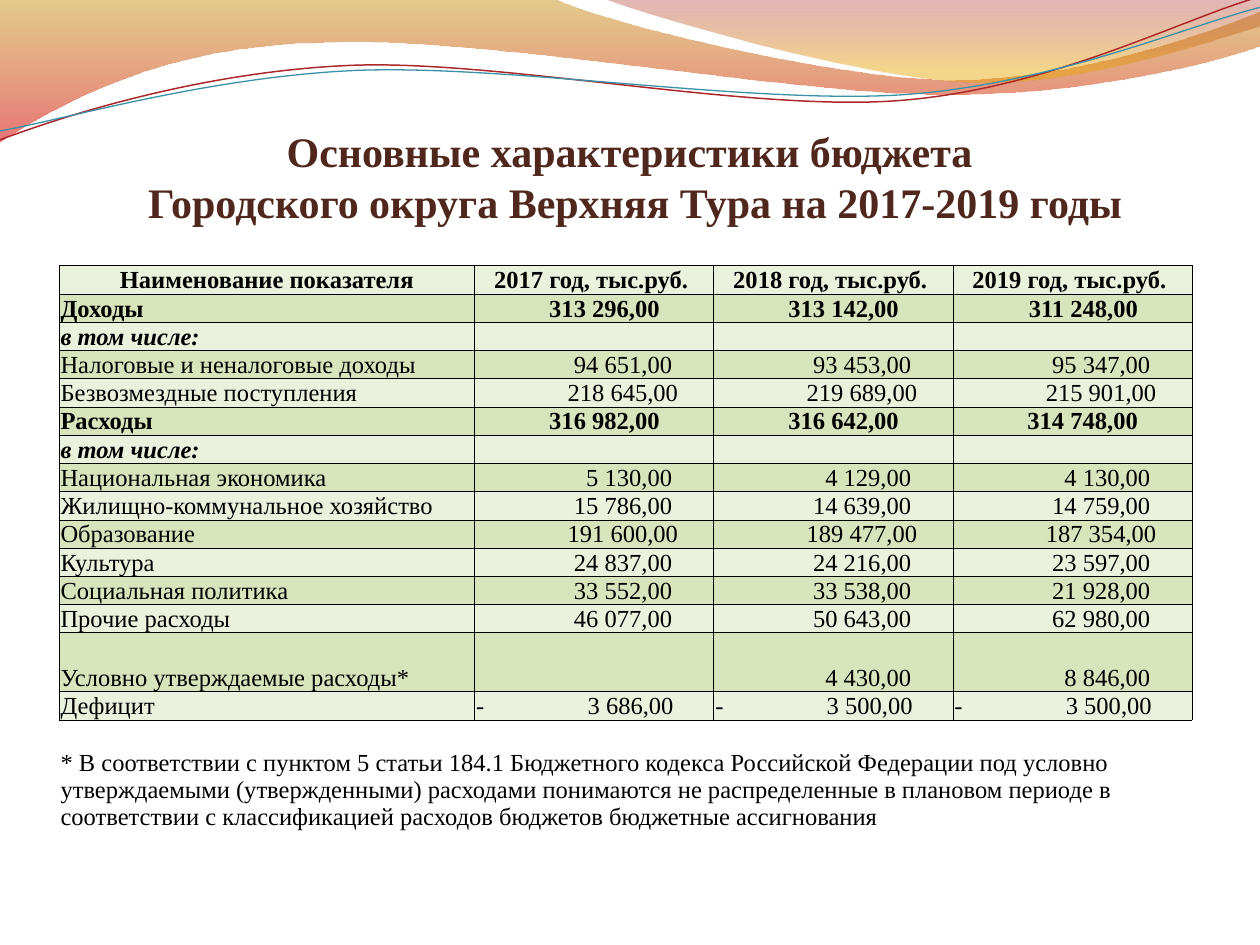
from lxml.etree import SubElement
from pptx import Presentation
from pptx.dml.color import RGBColor as RGB
from pptx.enum.text import MSO_ANCHOR as ANCHOR, MSO_AUTO_SIZE as AUTO, PP_ALIGN as ALIGN
from pptx.oxml.ns import qn
from pptx.util import Cm, Pt

THEME = {
    "font": "Times New Roman",
    "title_size": Pt(24), "table_size": Pt(14),
    "title": RGB.from_string("4F271C"), "text": RGB.from_string("000000"),
    "bands": (RGB.from_string("EAF1DD"), RGB.from_string("D7E4BC")),
    "border": "000000", "border_width": Pt(0.5),
    "no_grid_style": "{2D5ABB26-0587-4C30-8999-92F81FD0307C}",
}

TITLE = ("Основные характеристики бюджета \v"
         "Городского округа Верхняя Тура на 2017-2019 годы")
HEADER = ("Наименование показателя",
          "2017 год, тыс.руб. ", "2018 год, тыс.руб. ", "2019 год, тыс.руб. ")
# (kind, name, 2017, 2018, 2019)
ROWS = [
    ("total", "Доходы", "313 296,00", "313 142,00", "311 248,00"),
    ("including", "в том числе:", "", "", ""),
    ("item", "Налоговые и неналоговые доходы", "94 651,00", "93 453,00", "95 347,00"),
    ("item", "Безвозмездные поступления", "218 645,00", "219 689,00", "215 901,00"),
    ("total", "Расходы", "316 982,00", "316 642,00", "314 748,00"),
    ("including", "в том числе:", "", "", ""),
    ("item", "Национальная экономика", "5 130,00", "4 129,00", "4 130,00"),
    ("item", "Жилищно-коммунальное хозяйство", "15 786,00", "14 639,00", "14 759,00"),
    ("item", "Образование", "191 600,00", "189 477,00", "187 354,00"),
    ("item", "Культура", "24 837,00", "24 216,00", "23 597,00"),
    ("item", "Социальная политика", "33 552,00", "33 538,00", "21 928,00"),
    ("item", "Прочие расходы", "46 077,00", "50 643,00", "62 980,00"),
    ("tall", "Условно утверждаемые расходы*", "", "4 430,00", "8 846,00"),
    ("deficit", "Дефицит", "-\t3 686,00", "-\t3 500,00", "-\t3 500,00"),
]
NOTE = ("* В соответствии с пунктом 5 статьи 184.1 Бюджетного кодекса Российской "
        "Федерации под условно утверждаемыми (утвержденными) расходами понимаются "
        "не распределенные в плановом периоде в соответствии с классификацией "
        "расходов бюджетов бюджетные ассигнования")

KIND_FONT = {"header": {"bold": True}, "total": {"bold": True},
             "including": {"bold": True, "italic": True}}
COL_WIDTHS = (8.38, 4.82, 4.82, 4.82)
ROW_H, TALL_H, NOTE_H = 0.57, 1.19, 2.18
PAD, TOP_PAD = 0.03, 0.02
NUMBER_PAD, LONG_NUMBER_PAD, TOTAL_PAD = 0.84, 0.72, 1.09

# Outlines in cm: a pair is a straight step, six numbers are a Bézier step.
# Gradient stops: (position, colour, opacity in percent)
WAVES = [
    {"outline": [(0, -0.03), (11.18, -0.03),
                 (12.09, 0.43, 16.87, 1.6, 19.25, 1.6),
                 (21.67, 1.6, 24.33, 0.66, 25.4, 0.23), (25.43, 0.91),
                 (24.97, 1.12, 22.1, 1.93, 18.95, 1.9),
                 (15.8, 1.9, 9.7, 0.71, 6.53, 0.86),
                 (3.28, 0.89, 1.17, 2.11, -0.03, 2.87), (0, -0.03)],
     "stops": [(0, "C38B00", 45), (1, "D60305", 55)]},
    {"outline": [(12.17, -0.03),
                 (12.93, 0.28, 17.32, 1.57, 19.53, 1.65),
                 (21.74, 1.75, 24.41, 0.81, 25.4, 0.53), (25.4, 0), (12.17, -0.03)],
     "stops": [(0, "A11112", 30), (0.8, "E9A600", 45)]},
    {"outline": [(0, 2.82),
                 (1.22, 2.36, 4.01, 1.45, 7.04, 1.32),
                 (10.03, 1.19, 15.06, 2.26, 18.11, 2.03),
                 (21.16, 1.8, 23.83, 0.38, 25.35, -0.05)],
     "line": ("AC2829", 0.85)},
    {"outline": [(0, 2.64),
                 (1.19, 2.44, 4.17, 1.55, 7.19, 1.42),
                 (10.24, 1.3, 15.16, 2.11, 18.21, 1.91),
                 (21.23, 1.7, 23.9, 0.53, 25.4, 0.15)],
     "line": ("3891A7", 0.75)},
]


def set_attrs(obj, **values):
    for name, value in values.items():
        setattr(obj, name, value)


def add_outline(slide, outline, close):
    """Build a freeform, then join each Bézier step's three points into a curve."""
    points = [(Cm(x), Cm(y)) for step in outline for x, y in zip(step[::2], step[1::2])]
    builder = slide.shapes.build_freeform(*points[0])
    builder.add_line_segments(points[1:], close=close)
    s = builder.convert_to_shape()
    segments = iter(list(s._element.iter(qn("a:lnTo"))))
    for step in outline[1:]:
        first = next(segments)
        if len(step) == 6:
            first.tag = qn("a:cubicBezTo")
            for _ in range(2):
                control = next(segments)
                first.append(control[0])
                control.getparent().remove(control)
    return s


def add_wave(slide, outline, stops=None, line=None):
    s = add_outline(slide, outline, close=bool(stops))
    s.shadow.inherit = False
    if line:
        color, width = line
        s.fill.background()
        s.line.color.rgb = RGB.from_string(color)
        s.line.width = Pt(width)
        return
    s.line.fill.background()
    s.fill.gradient()
    s.fill.gradient_angle = 270
    for stop, (position, color, opacity) in zip(s.fill.gradient_stops, stops):
        stop.position = position
        stop.color.rgb = RGB.from_string(color)
        for clr in stop._gs.iter(qn("a:srgbClr")):
            SubElement(clr, qn("a:alpha"), val=str(opacity * 1000))


def set_borders(cell, shown):
    tc_pr = cell._tc.get_or_add_tcPr()
    for side in "LRTB":
        ln = SubElement(tc_pr, qn(f"a:ln{side}"), w=str(THEME["border_width"]))
        if side in shown:
            fill = SubElement(ln, qn("a:solidFill"))
            SubElement(fill, qn("a:srgbClr"), val=THEME["border"])
        else:
            SubElement(ln, qn("a:noFill"))


def write_cell(cell, text, kind="item", align=ALIGN.LEFT, right=PAD, anchor=ANCHOR.BOTTOM):
    set_attrs(cell, vertical_anchor=anchor, margin_left=Cm(PAD), margin_right=Cm(right),
              margin_top=Cm(TOP_PAD), margin_bottom=0)
    p = cell.text_frame.paragraphs[0]
    p.alignment = align
    if not text:  # an empty cell keeps the row at the table's type size
        end = SubElement(p._p, qn("a:endParaRPr"), sz=str(int(THEME["table_size"].pt * 100)))
        SubElement(end, qn("a:latin"), typeface=THEME["font"])
        return
    r = p.add_run()
    r.text = text
    set_attrs(r.font, name=THEME["font"], size=THEME["table_size"], **KIND_FONT.get(kind, {}))
    r.font.color.rgb = THEME["text"]
    if "\t" in text:
        tabs = SubElement(p._p.get_or_add_pPr(), qn("a:tabLst"))
        SubElement(tabs, qn("a:tab"), pos=str(Cm(COL_WIDTHS[1] - NUMBER_PAD)), algn="r")


def number_pad(kind, text):
    if kind == "total":
        return TOTAL_PAD
    return LONG_NUMBER_PAD if len(text) == 10 else NUMBER_PAD


def add_budget_table(slide):
    rows = [("header", *HEADER), *ROWS]
    heights = [TALL_H if row[0] == "tall" else ROW_H for row in rows] + [ROW_H, NOTE_H]
    frame = slide.shapes.add_table(len(heights), len(COL_WIDTHS), Cm(1.19), Cm(5.36),
                                   Cm(sum(COL_WIDTHS)), Cm(sum(heights)))
    table = frame.table
    set_attrs(table, first_row=False, horz_banding=False)
    table._tbl.tblPr[0].text = THEME["no_grid_style"]
    for column, width in zip(table.columns, COL_WIDTHS):
        column.width = Cm(width)
    for row, height in zip(table.rows, heights):
        row.height = Cm(height)

    for i, (kind, *texts) in enumerate(rows):
        for j, text in enumerate(texts):
            cell = table.cell(i, j)
            set_borders(cell, "LRTB")
            cell.fill.solid()
            cell.fill.fore_color.rgb = THEME["bands"][i % 2]
            align, right = ALIGN.LEFT, PAD
            if kind == "header":
                align = ALIGN.CENTER
            elif j and kind != "deficit":
                align, right = ALIGN.RIGHT, number_pad(kind, text)
            write_cell(cell, text, kind, align, right)

    gap, last = len(rows), len(rows) + 1
    for j in range(len(COL_WIDTHS)):
        set_borders(table.cell(gap, j), "T")
        write_cell(table.cell(gap, j), "")
        set_borders(table.cell(last, j), "")
    table.cell(last, 0).merge(table.cell(last, len(COL_WIDTHS) - 1))
    write_cell(table.cell(last, 0), NOTE, anchor=ANCHOR.TOP)


def format_title(title):
    set_attrs(title, left=Cm(1.27), top=Cm(2.18), width=Cm(23.06), height=Cm(2.39))
    tf = title.text_frame
    set_attrs(tf, text=TITLE, word_wrap=True, auto_size=AUTO.NONE, vertical_anchor=ANCHOR.BOTTOM,
              margin_left=0, margin_right=0, margin_top=Cm(0.13), margin_bottom=0)
    p = tf.paragraphs[0]
    p.alignment = ALIGN.CENTER
    for r in p.runs:
        set_attrs(r.font, name=THEME["font"], size=THEME["title_size"], bold=True)
        r.font.color.rgb = THEME["title"]


def main():
    prs = Presentation()
    set_attrs(prs, slide_width=Cm(25.4), slide_height=Cm(19.05))
    slide = prs.slides.add_slide(prs.slide_layouts[5])
    title = slide.shapes.title
    for wave in WAVES:
        add_wave(slide, **wave)
    title._element.getparent().append(title._element)  # in front of the waves
    format_title(title)
    add_budget_table(slide)
    prs.save("out.pptx")


if __name__ == "__main__":
    main()
